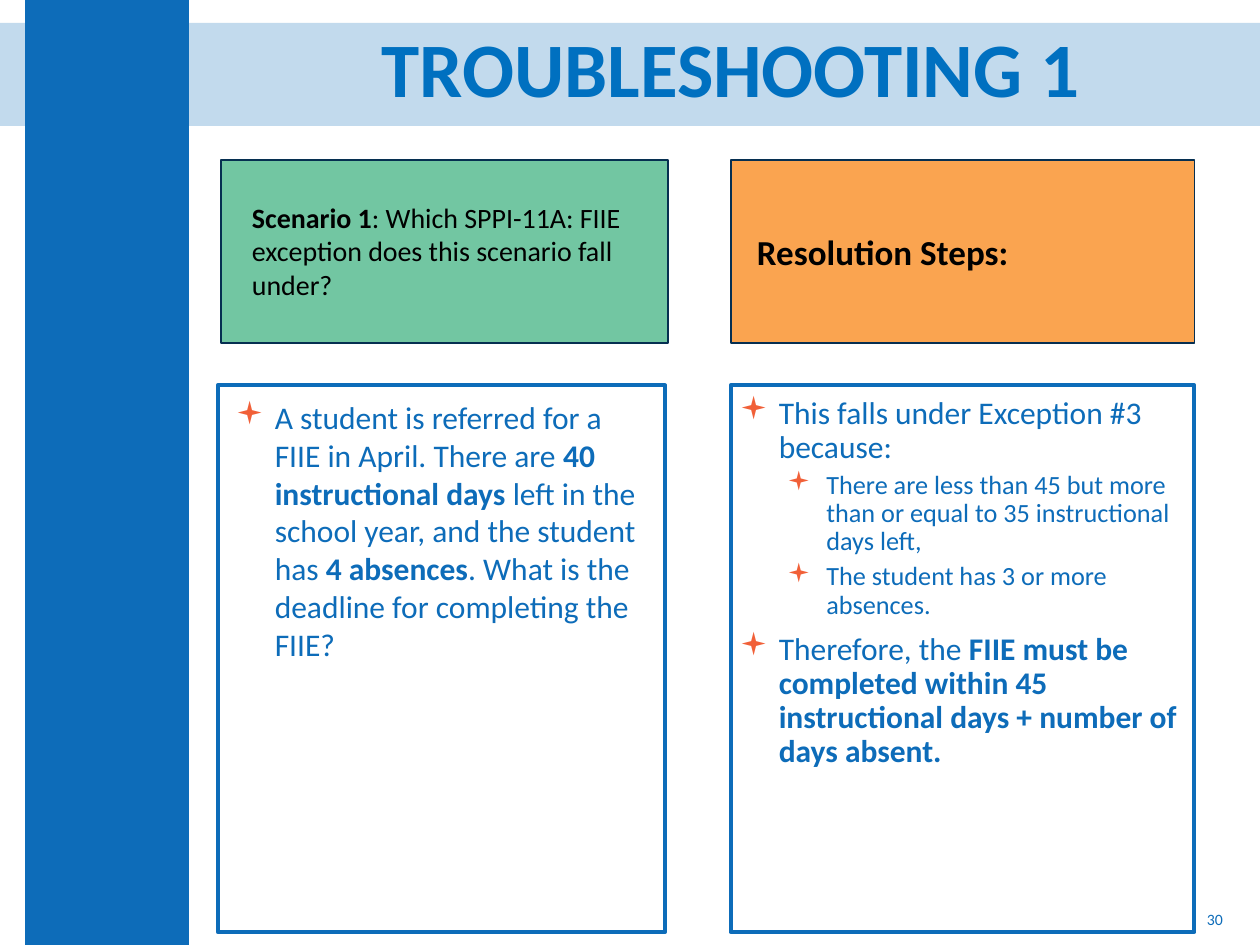
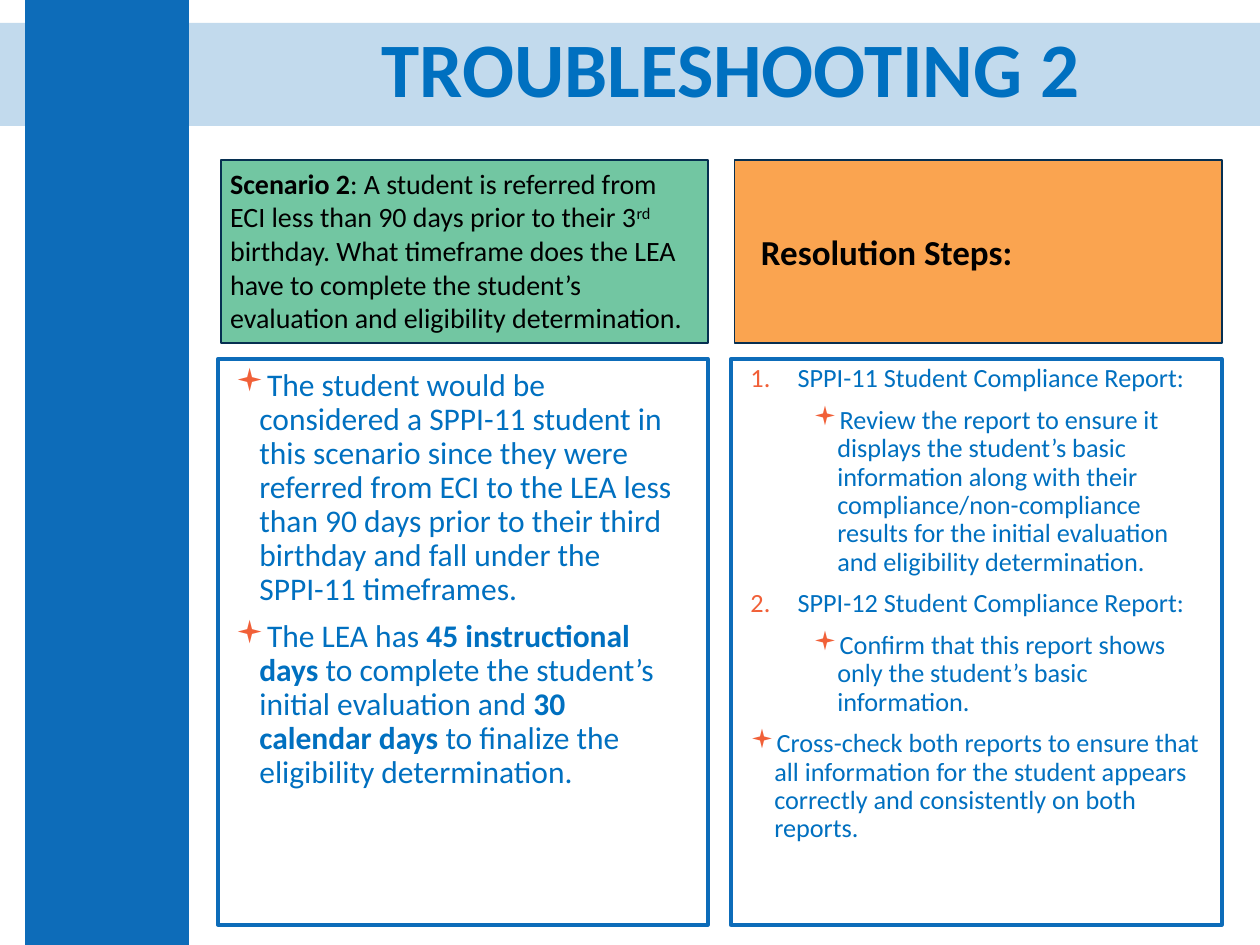
from dataclasses import dataclass

from lxml import etree
from pptx import Presentation
from pptx import util as u
from pptx.dml.color import RGBColor
from pptx.enum import shapes, text
from pptx.oxml import ns

BLUE = RGBColor(0x0D, 0x6C, 0xB9)
SKY = RGBColor(0x00, 0x70, 0xC0)
GREEN = RGBColor(0x72, 0xC6, 0xA2)
GOLD = RGBColor(0xFA, 0xA4, 0x50)
NAVY = RGBColor(0x06, 0x2F, 0x51)
BLACK = RGBColor(0, 0, 0)
RED = "F16038"
FONT = "Calibri"
HEAD_TOP, HEAD_TALL = 3.23, 3.68
SQUARE, NUMBER = "▪", "1."


@dataclass
class Par:
    """A paragraph; *stars* mark bold and ^carets^ mark raised text."""
    words: str
    size: float = 18
    color: RGBColor = BLUE
    bullet: str = ""
    left: float = 0
    hang: float = 0
    level: int = 0
    before: float = 0
    lines: float = 0.9
    bold: bool = False
    align: text.PP_ALIGN = text.PP_ALIGN.LEFT


def add_xml(parent, tag, **attrs):
    """Append a drawing element."""
    return etree.SubElement(parent, ns.qn(tag), attrs)


def add_rect(slide, area, fill=None, line=None, width=1):
    """Draw a rectangle with an optional fill and line."""
    rect = slide.shapes.add_shape(shapes.MSO_SHAPE.RECTANGLE, *map(u.Cm, area))
    rect.shadow.inherit = False
    if fill is None:
        rect.fill.background()
    else:
        rect.fill.solid()
        rect.fill.fore_color.rgb = fill
    if line is None:
        rect.line.fill.background()
    else:
        rect.line.color.rgb = line
        rect.line.width = u.Pt(width)
    return rect


def add_mark(item, par):
    """Give a paragraph its indent and its bullet or number."""
    props = item._p.get_or_add_pPr()
    props.set("marL", str(u.Cm(par.left)))
    props.set("indent", str(-u.Cm(par.hang)))
    add_xml(add_xml(props, "a:buClr"), "a:srgbClr", val=RED)
    if par.bullet == NUMBER:
        add_xml(props, "a:buFont", typeface="+mj-lt")
        add_xml(props, "a:buAutoNum", type="arabicPeriod")
    else:
        add_xml(props, "a:buFont", typeface="Wingdings")
        add_xml(props, "a:buChar", char=par.bullet)


def add_runs(item, words):
    """Split marked words into plain, bold and raised runs."""
    for i, part in enumerate(words.split("*")):
        for j, piece in enumerate(part.split("^")):
            if piece:
                run = item.add_run()
                run.text = piece
                if i % 2:
                    run.font.bold = True
                if j % 2:
                    run._r.get_or_add_rPr().set("baseline", "30000")


def write(frame, pars, middle=False):
    """Fill a text frame with paragraphs."""
    frame.word_wrap = True
    anchor = text.MSO_ANCHOR
    frame.vertical_anchor = anchor.MIDDLE if middle else anchor.TOP
    for i, par in enumerate(pars):
        item = frame.add_paragraph() if i else frame.paragraphs[0]
        item.level = par.level
        item.alignment = par.align
        item.line_spacing = par.lines
        item.space_before = u.Pt(par.before if i else 0)
        if par.bullet:
            add_mark(item, par)
        item.font.name = FONT
        item.font.size = u.Pt(par.size)
        item.font.bold = par.bold
        item.font.color.rgb = par.color
        add_runs(item, par.words)


def add_text(slide, area, pars, middle=False):
    """Place a text box."""
    box = slide.shapes.add_textbox(*map(u.Cm, area))
    write(box.text_frame, pars, middle)
    return box.text_frame


def add_page(deck, title):
    """Start a slide with the band, the side bar and the title."""
    slide = deck.slides.add_slide(deck.slide_layouts[6])
    band = add_rect(slide, (0, 0.46, 25.4, 2.08), BLUE)
    tint = band._element.spPr.find(ns.qn("a:solidFill"))[0]
    add_xml(tint, "a:alpha", val="25000")
    add_rect(slide, (0.51, 0, 3.3, 19.05), BLUE)
    add_text(slide, (4.83, 0.43, 19.81, 2.08),
             [Par(title, 44, SKY, bold=True, align=text.PP_ALIGN.CENTER)], True)
    return slide


def add_heads(slide, wide, left, right):
    """Draw the green scenario box and the orange steps box."""
    add_rect(slide, (4.45, HEAD_TOP, wide, HEAD_TALL), GREEN, NAVY)
    steps = add_rect(slide, (left, HEAD_TOP, right, HEAD_TALL), GOLD, NAVY)
    steps.text_frame.margin_left = u.Cm(0.53)
    write(steps.text_frame,
          [Par("Resolution Steps:", 20, BLACK, lines=1, bold=True)], True)


def add_panels(slide, top, tall, wides):
    """Draw the two outlined panels."""
    for left, wide in zip((4.39, 14.73), wides):
        add_rect(slide, (left, top, wide, tall), line=BLUE, width=2.25)


def add_first(deck):
    """Build the slide on the first scenario."""
    slide = add_page(deck, "TROUBLESHOOTING 1")
    add_heads(slide, 9.02, 14.73, 9.35)
    add_text(slide, (4.83, 3.91, 8.89, 2.49), [Par(
        "*Scenario 1*: Which SPPI-11A: FIIE exception does this scenario "
        "fall under?", 16, BLACK, lines=1)])
    add_panels(slide, 7.77, 11.02, (9.02, 9.35))
    main_mark = dict(bullet=SQUARE, left=0.79, hang=0.79, before=7.5)
    sub_mark = dict(size=15, bullet=SQUARE, left=1.75, hang=0.79, level=1,
                    before=3.8)
    add_text(slide, (4.5, 7.9, 8.89, 5.64), [Par(
        "A student is referred for a FIIE in April. There are *40 "
        "instructional days* left in the school year, and the student has "
        "*4 absences*. What is the deadline for completing the FIIE?",
        lines=1, **main_mark)])
    steps = add_text(slide, (14.73, 7.9, 9.35, 10.34), [
        Par("This falls under Exception #3 because:", **main_mark),
        Par("There are less than 45 but more than or equal to 35 "
            "instructional days left,", **sub_mark),
        Par("The student has 3 or more absences.", **sub_mark),
        Par("Therefore, the *FIIE must be completed within 45 instructional "
            "days + number of days absent.*", **main_mark)])
    steps.margin_left = steps.margin_right = u.Cm(0.18)
    steps.margin_top = steps.margin_bottom = u.Cm(0.1)
    add_text(slide, (19.18, 18.03, 5.72, 1.02),
             [Par("30", 9, lines=1, align=text.PP_ALIGN.RIGHT)], True)


def add_second(deck):
    """Build the slide on the second scenario."""
    slide = add_page(deck, "TROUBLESHOOTING 2")
    add_heads(slide, 9.83, 14.81, 9.83)
    add_panels(slide, 7.24, 11.4, (9.88, 9.9))
    add_text(slide, (4.39, HEAD_TOP, 9.88, 3.76), [Par(
        "*Scenario 2*: A student is referred from ECI less than 90 days "
        "prior to their 3^rd^ birthday. What timeframe does the LEA have to "
        "complete the student’s evaluation and eligibility determination.",
        16, BLACK, lines=1)])
    look = dict(color=SKY, before=7.5)
    mark = dict(look, bullet=SQUARE, left=0.48, hang=0.48)
    count = dict(look, size=15, bullet=NUMBER, left=0.95, hang=0.95)
    sub = dict(mark, size=15, left=1.75, level=1)
    add_text(slide, (4.5, 7.32, 9.32, 8.84), [
        Par("The student would be considered a SPPI-11 student in this "
            "scenario since they were referred from ECI to the LEA less than "
            "90 days prior to their third birthday and fall under the "
            "SPPI-11 timeframes.", **mark),
        Par("The LEA has *45 instructional days *to complete the student’s "
            "initial evaluation and *30 calendar days *to finalize the "
            "eligibility determination.", **mark)])
    add_text(slide, (14.88, 7.24, 9.75, 10.06), [
        Par("SPPI-11 Student Compliance Report:", **count),
        Par("Review the report to ensure it displays the student’s basic "
            "information along with their compliance/non-compliance results "
            "for the initial evaluation and eligibility determination.",
            **sub),
        Par("SPPI-12 Student Compliance Report:", **count),
        Par("Confirm that this report shows only the student’s basic "
            "information.", **sub),
        Par("Cross-check both reports to ensure that all information for the "
            "student appears correctly and consistently on both reports.",
            **dict(mark, size=15))])


def main():
    """Build and save the deck."""
    deck = Presentation()
    deck.slide_width, deck.slide_height = u.Cm(25.4), u.Cm(19.05)
    add_first(deck)
    add_second(deck)
    deck.save("out.pptx")


if __name__ == "__main__":
    main()
